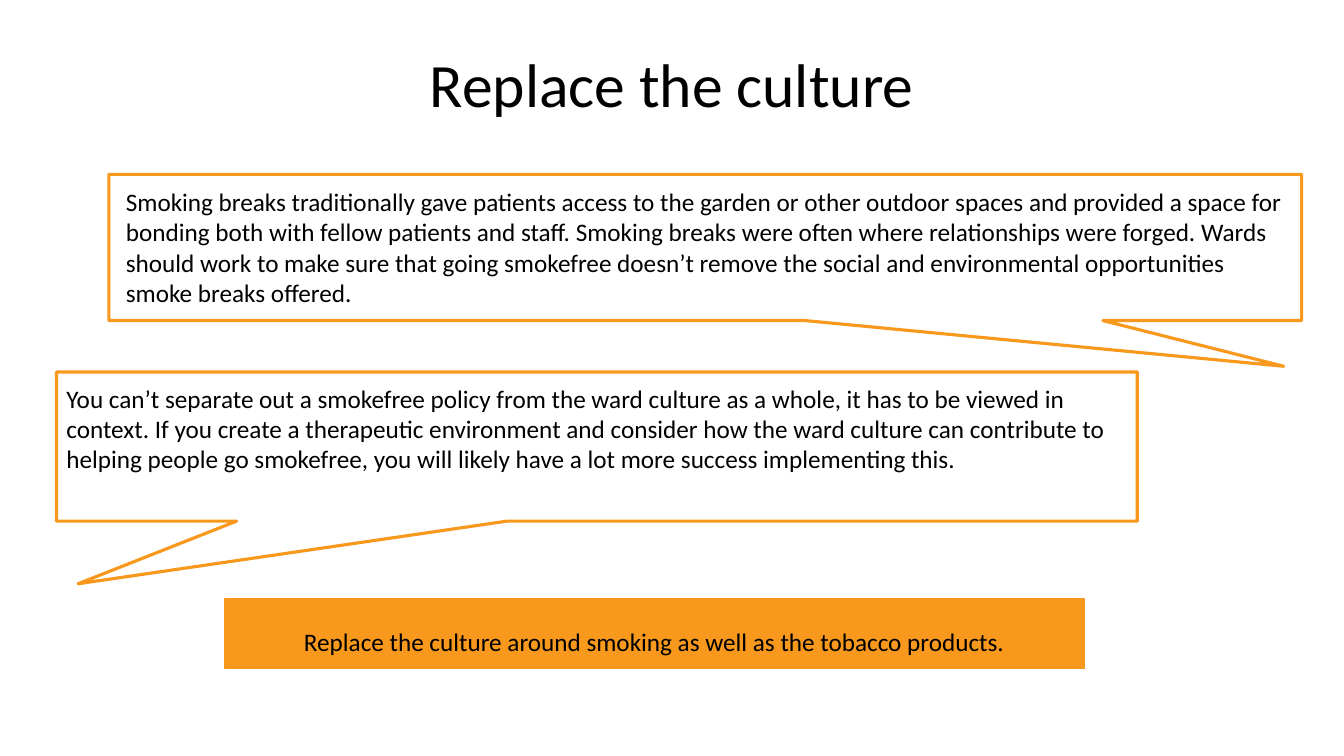
from pptx import Presentation
from pptx.dml.color import RGBColor
from pptx.enum import shapes, text
from pptx.util import Inches, Pt

ORANGE, WHITE, BLACK = "F8981D", "FFFFFF", "000000"
LEFT, CENTER = text.PP_ALIGN.LEFT, text.PP_ALIGN.CENTER


def color(code):
    return RGBColor.from_string(code)


class Deck:
    def __init__(self, font):
        self.font = font
        self.show = Presentation()
        self.show.slide_width = Inches(13.33)
        self.show.slide_height = Inches(7.5)
        self.slide = self.show.slides.add_slide(self.show.slide_layouts[6])

    def shape(self, kind, box, fill, width, tip=()):
        item = self.slide.shapes.add_shape(kind, *map(Inches, box))
        item.shadow.inherit = False
        for i, value in enumerate(tip):
            item.adjustments[i] = value
        item.fill.solid()
        item.fill.fore_color.rgb = color(fill)
        item.line.color.rgb = color(ORANGE)
        item.line.width = Pt(width)

    def bar(self, box):
        self.shape(shapes.MSO_SHAPE.RECTANGLE, box, ORANGE, 1)

    def bubble(self, box, tip):
        self.shape(shapes.MSO_SHAPE.RECTANGULAR_CALLOUT, box, WHITE, 2.25, tip)

    def label(self, box, words, size=18, align=LEFT, anchor=text.MSO_ANCHOR.TOP, space=1.0):
        frame = self.slide.shapes.add_textbox(*map(Inches, box)).text_frame
        frame.word_wrap = True
        frame.vertical_anchor = anchor
        para = frame.paragraphs[0]
        para.text = words
        para.alignment = align
        para.line_spacing = space
        para.font.name = self.font
        para.font.size = Pt(size)
        para.font.color.rgb = color(BLACK)


def main():
    deck = Deck("Calibri")
    deck.label((3, 0.14, 7.33, 1.45), "Replace the culture", 44, CENTER, text.MSO_ANCHOR.MIDDLE, 0.9)
    deck.bubble((1.08, 1.73, 11.83, 1.45), (0.485, 0.813))
    deck.label(
        (1.15, 1.8, 11.7, 1.31),
        "Smoking breaks traditionally gave patients access to the garden or other outdoor spaces "
        "and provided a space for bonding both with fellow patients and staff. Smoking breaks were "
        "often where relationships were forged. Wards should work to make sure that going smokefree "
        "doesn’t remove the social and environmental opportunities smoke breaks offered.",
    )
    deck.bubble((0.56, 3.69, 10.72, 1.48), (-0.48, 0.92))
    deck.label(
        (0.56, 3.75, 10.72, 1.31),
        "You can’t separate out a smokefree policy from the ward culture as a whole, it has to be "
        "viewed in context. If you create a therapeutic environment and consider how the ward "
        "culture can contribute to helping people go smokefree, you will likely have a lot more "
        "success implementing this.",
    )
    deck.bar((2.23, 5.94, 8.52, 0.69))
    deck.label(
        (2.4, 6.16, 8.18, 0.71),
        "Replace the culture around smoking as well as the tobacco products.",
        align=CENTER,
    )
    deck.show.save("out.pptx")


if __name__ == "__main__":
    main()
